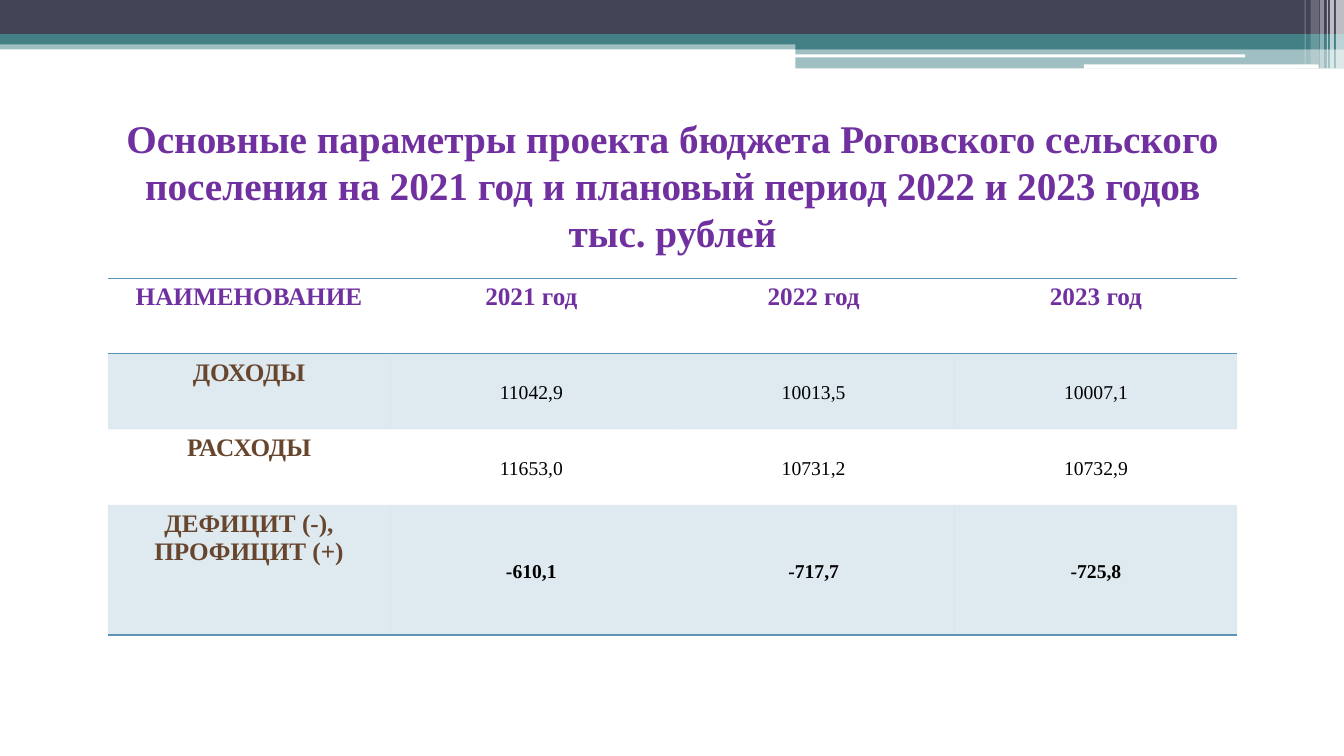
from lxml import etree
from pptx import Presentation
from pptx.dml.color import RGBColor
from pptx.enum.shapes import MSO_SHAPE
from pptx.enum.text import MSO_ANCHOR, MSO_AUTO_SIZE, PP_ALIGN
from pptx.oxml.ns import qn
from pptx.util import Emu, Pt

RECT = MSO_SHAPE.RECTANGLE
ROUND = MSO_SHAPE.ROUNDED_RECTANGLE
CENTER = PP_ALIGN.CENTER
TOP, MIDDLE = MSO_ANCHOR.TOP, MSO_ANCHOR.MIDDLE
NO_FIT = MSO_AUTO_SIZE.NONE
SCALE = 9144  # 100 px to the inch
PLAIN = "{2D5ABB26-0587-4C30-8999-92F81FD0307C}"  # table style without grid
COLORS = {"navy": "424456", "teal": "438086", "white": "FFFFFF", "violet": "7030A0",
          "brown": "68462E", "black": "000000", "blue": "5C92B5"}


def px(n):
    return Emu(n * SCALE)


def rgb(name):
    return RGBColor.from_string(COLORS[name])


class Deck:
    font = "Times New Roman"

    def __init__(self, wide, high):
        self.prs = Presentation()
        self.prs.slide_width, self.prs.slide_height = px(wide), px(high)
        self.slide = self.prs.slides.add_slide(self.prs.slide_layouts[5])

    def paint(self, fill, node, color, alpha):
        fill.solid()
        fill.fore_color.rgb = rgb(color)
        if alpha < 100:
            tint = node.find(qn("a:solidFill")).find(qn("a:srgbClr"))
            etree.SubElement(tint, qn("a:alpha"), val=str(alpha * 1000))

    def bar(self, x, y, w, h, color, alpha=100, kind=RECT):
        bar = self.slide.shapes.add_shape(kind, px(x), px(y), px(w), px(h))
        bar.shadow.inherit = False
        bar.line.fill.background()
        self.paint(bar.fill, bar._element.spPr, color, alpha)

    def text(self, para, words, size, color, bold):
        para.alignment = CENTER
        run = para.add_run()
        run.text = words
        run.font.name, run.font.size, run.font.bold = self.font, Pt(size), bold
        run.font.color.rgb = rgb(color)

    def title(self, x, y, w, h, lines, size, color):
        box = self.slide.shapes.title
        box.left, box.top, box.width, box.height = px(x), px(y), px(w), px(h)
        frame = box.text_frame
        frame.word_wrap, frame.auto_size = True, NO_FIT
        frame.vertical_anchor = MIDDLE
        para = frame.paragraphs[0]
        for i, line in enumerate(lines):
            if i:
                para.add_line_break()
            self.text(para, line, size, color, True)

    def rule(self, cell, sides):
        for i, side in enumerate(sides):
            line = etree.Element(qn("a:ln" + side), w=str(Pt(1)))
            fill = etree.SubElement(line, qn("a:solidFill"))
            etree.SubElement(fill, qn("a:srgbClr"), val=COLORS["blue"])
            cell._tc.get_or_add_tcPr().insert(i, line)

    def cell(self, cell, words, size, color, bold, inset, anchor, space):
        cell.margin_left = cell.margin_right = px(inset[0])
        cell.margin_top = cell.margin_bottom = px(inset[1])
        cell.vertical_anchor = anchor
        para = cell.text_frame.paragraphs[0]
        para.line_spacing = space
        self.text(para, words, size, color, bold)

    def table(self, x, y, wide, highs, rows):
        last = len(rows) - 1
        frame = self.slide.shapes.add_table(len(rows), len(rows[0]), px(x), px(y),
                                            px(wide * len(rows[0])), px(sum(highs)))
        grid = frame.table
        grid.first_row = grid.horz_banding = False
        grid._tbl.tblPr.find(qn("a:tableStyleId")).text = PLAIN
        for col in grid.columns:
            col.width = px(wide)
        for r, row in enumerate(rows):
            grid.rows[r].height = px(highs[r])
            for c, words in enumerate(row):
                cell = grid.cell(r, c)
                if r == 0 or c == 0:
                    color = "brown" if r else "violet"
                    self.cell(cell, words, 18, color, True, (8, 5), TOP, 1.0)
                else:
                    self.cell(cell, words, 14, "black", r == last, (7, 0), MIDDLE, 1.15)
                if r % 2:
                    self.paint(cell.fill, cell._tc.tcPr, "blue", 20)
                else:
                    cell.fill.background()
                self.rule(cell, {0: "TB", last: "B"}.get(r, ""))


def main():
    deck = Deck(1333, 750)

    # Bands across the top
    deck.bar(0, 40, 1333, 9, "teal", 50)
    deck.bar(0, 0, 1333, 34, "navy")
    deck.bar(0, 34, 1333, 10, "teal")
    deck.bar(789, 39, 544, 10, "teal")
    deck.bar(789, 48, 544, 20, "teal", 50)
    deck.bar(788, 54, 447, 3, "white", kind=ROUND)
    deck.bar(1075, 64, 233, 4, "white", kind=ROUND)

    # Pale stripes in the corner
    for x, w, h, alpha in [(1325, 8, 68, 65), (1319, 4, 68, 65), (1316, 1, 68, 60),
                           (1309, 4, 68, 40), (1300, 8, 64, 20), (1294, 1, 64, 30)]:
        deck.bar(x, 0, w, h, "white", alpha)

    # Title
    deck.title(67, 125, 1200, 117,
               ["Основные параметры проекта бюджета Роговского сельского "
                "поселения на 2021 год и плановый период 2022 и 2023 годов",
                "тыс. рублей"], 28, "violet")

    # Budget table
    deck.table(107, 276, 280, [75, 75, 75, 129], [
        ["НАИМЕНОВАНИЕ", "2021 год", "2022 год", "2023 год"],
        ["ДОХОДЫ", "11042,9", "10013,5", "10007,1"],
        ["РАСХОДЫ", "11653,0", "10731,2", "10732,9"],
        ["ДЕФИЦИТ (-), ПРОФИЦИТ (+)", "-610,1", "-717,7", "-725,8"],
    ])

    deck.prs.save("out.pptx")


if __name__ == "__main__":
    main()
